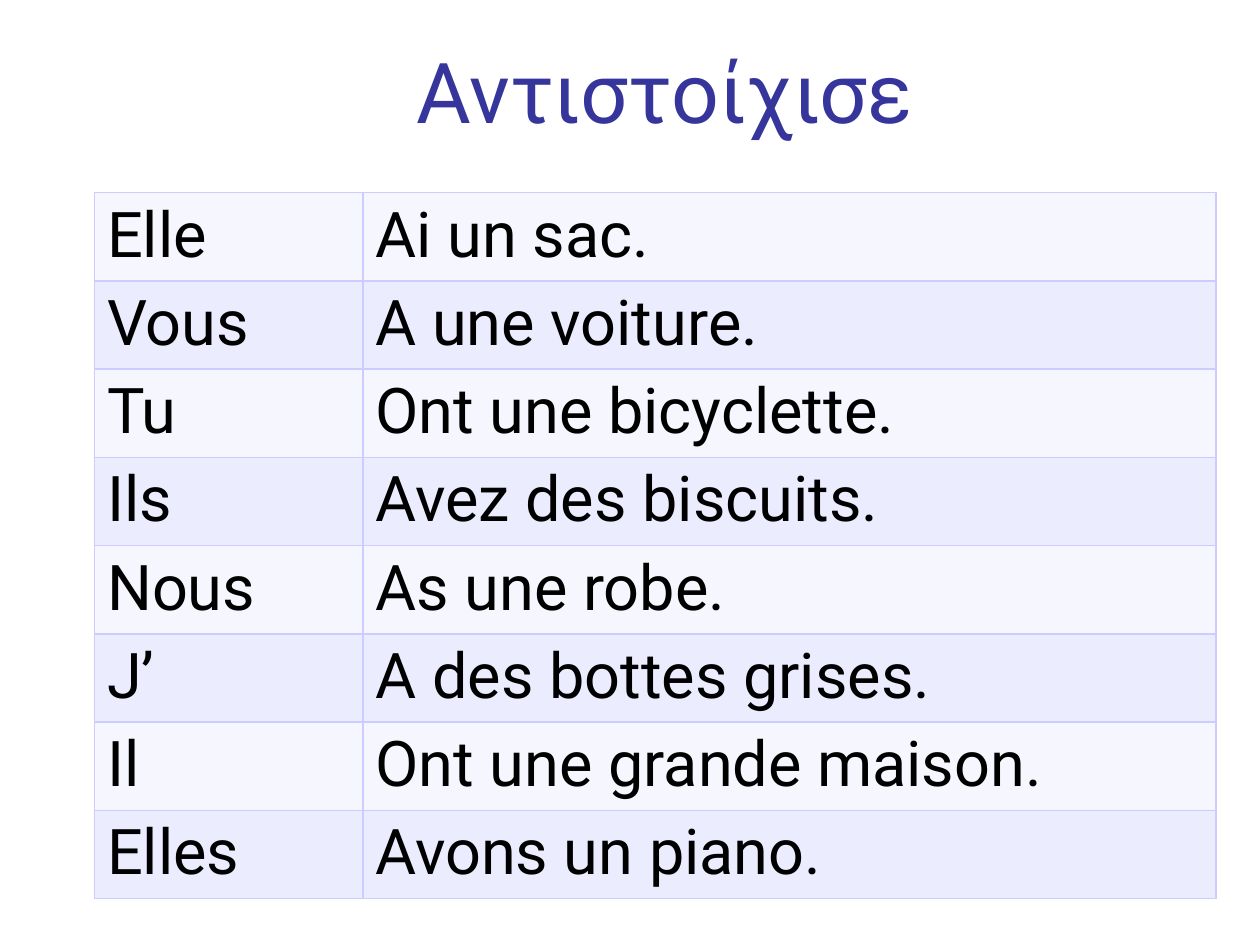
from typing import NamedTuple

from lxml.etree import SubElement
from pptx import Presentation
from pptx.dml.color import RGBColor
from pptx.enum.text import MSO_ANCHOR, PP_ALIGN
from pptx.oxml.ns import qn
from pptx.util import Pt

FONT_NAME = "Roboto"
TITLE_COLOR = RGBColor(0x35, 0x35, 0x9B)
TEXT_COLOR = RGBColor(0x00, 0x00, 0x00)
ROW_FILLS = (RGBColor(0xF6, 0xF6, 0xFF), RGBColor(0xEC, 0xEC, 0xFF))
BORDER_COLOR = RGBColor(0xCC, 0xCC, 0xFF)

COLUMN_WIDTHS = (Pt(153.4), Pt(487.4))
ROW_HEIGHT = Pt(49.4)


class Match(NamedTuple):
    pronoun: str
    ending: str


MATCHES = (
    Match("Elle", "Ai un sac."),
    Match("Vous", "A une voiture."),
    Match("Tu", "Ont une bicyclette."),
    Match("Ils", "Avez des biscuits."),
    Match("Nous", "As une robe."),
    Match("J’", "A des bottes grises."),
    Match("Il", "Ont une grande maison."),
    Match("Elles", "Avons un piano."),
)


def format_text(text_frame, size: int, color: RGBColor) -> None:
    for para in text_frame.paragraphs:
        for span in para.runs:
            span.font.name = FONT_NAME
            span.font.size = Pt(size)
            span.font.color.rgb = color


def add_borders(cell) -> None:
    properties = cell._tc.get_or_add_tcPr()
    for position, side in enumerate(("a:lnL", "a:lnR", "a:lnT", "a:lnB")):
        line = SubElement(properties, qn(side), w=str(Pt(1)))
        fill = SubElement(line, qn("a:solidFill"))
        SubElement(fill, qn("a:srgbClr"), val=str(BORDER_COLOR))
        properties.insert(position, line)  # borders come before the cell fill


def add_title(page, text: str) -> None:
    box = page.shapes.add_textbox(Pt(76.3), Pt(15.1), Pt(607), Pt(493.2))
    frame = box.text_frame
    frame.word_wrap = True
    frame.vertical_anchor = MSO_ANCHOR.TOP
    frame.margin_top = Pt(7.2)
    frame.text = text
    frame.paragraphs[0].alignment = PP_ALIGN.CENTER
    format_text(frame, 48, TITLE_COLOR)


def add_match_table(page, matches: tuple[Match, ...]) -> None:
    table = page.shapes.add_table(
        len(matches), len(COLUMN_WIDTHS), Pt(54), Pt(110),
        sum(COLUMN_WIDTHS), ROW_HEIGHT * len(matches),
    ).table
    table.first_row = False
    table.horz_banding = False
    for column, width in zip(table.columns, COLUMN_WIDTHS):
        column.width = width
    for index, (row, match) in enumerate(zip(table.rows, matches)):
        row.height = ROW_HEIGHT
        for cell, text in zip(row.cells, match):
            cell.text_frame.text = text
            format_text(cell.text_frame, 36, TEXT_COLOR)
            cell.fill.solid()
            cell.fill.fore_color.rgb = ROW_FILLS[index % 2]
            add_borders(cell)


def main() -> None:
    deck = Presentation()
    deck.slide_width, deck.slide_height = Pt(720), Pt(540)
    page = deck.slides.add_slide(deck.slide_layouts[6])

    # Heading
    add_title(page, "Αντιστοίχισε")

    # Pronouns and sentence endings to match
    add_match_table(page, MATCHES)

    deck.save("out.pptx")


if __name__ == "__main__":
    main()
